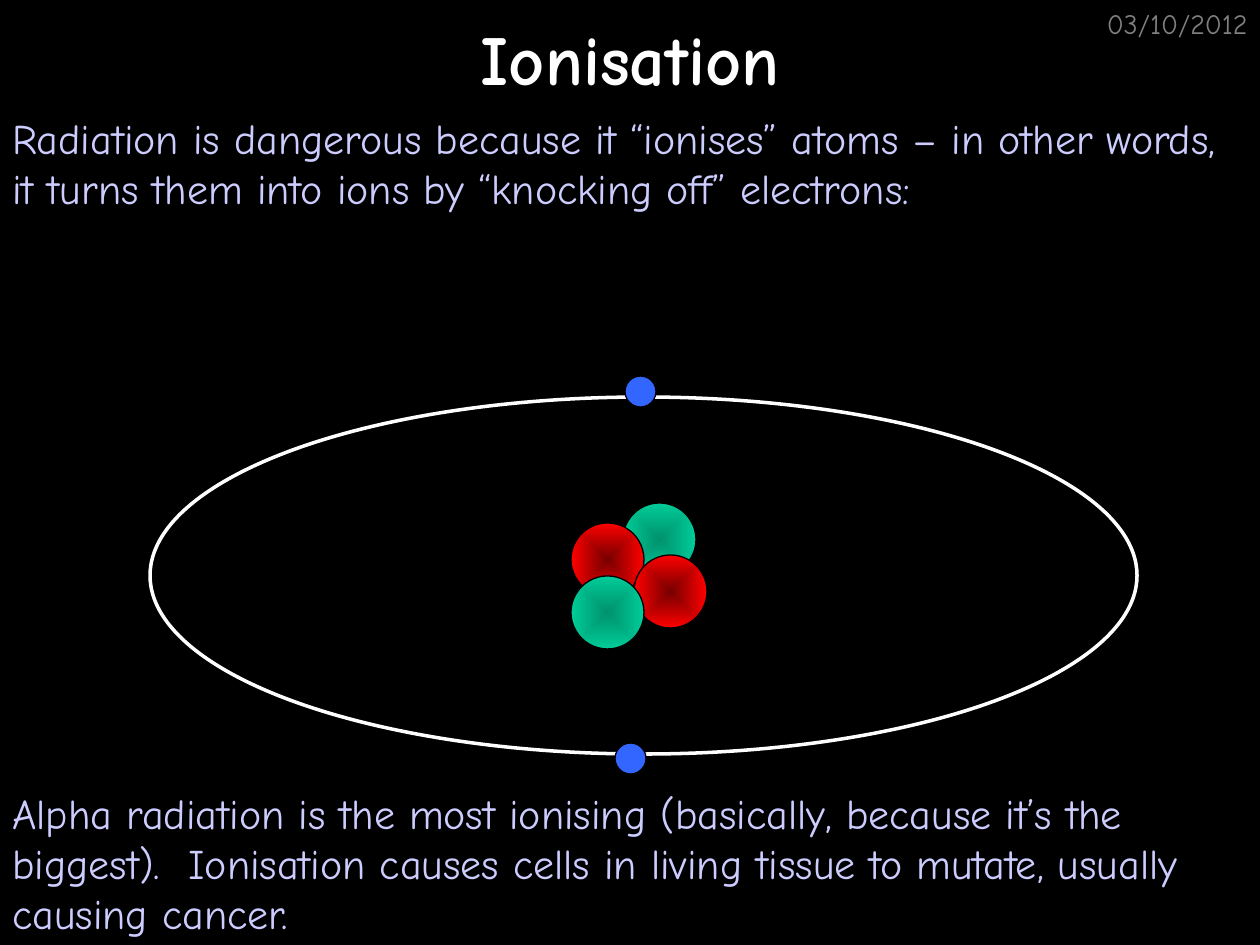
from lxml import etree
from pptx import Presentation
from pptx import util as u
from pptx.dml.color import RGBColor
from pptx.enum import shapes, text
from pptx.oxml import ns

WHITE = RGBColor(0xFF, 0xFF, 0xFF)
BLACK = RGBColor(0x00, 0x00, 0x00)
GREY = RGBColor(0x80, 0x80, 0x80)
LILAC = RGBColor(0xCC, 0xCC, 0xFF)
BLUE = RGBColor(0x33, 0x66, 0xFF)
GREEN = (RGBColor(0x00, 0x92, 0x6D), RGBColor(0x00, 0xCC, 0x99))
RED = (RGBColor(0x76, 0x00, 0x00), RGBColor(0xFF, 0x00, 0x00))


def px(n):
    return u.Emu(n * 914400 // 126)


class Board:
    face = "Comic Neue"

    def __init__(self, deck):
        self.slide = deck.slides.add_slide(deck.slide_layouts[5])
        fill = self.slide.background.fill
        fill.solid()
        fill.fore_color.rgb = BLACK

    def letter(self, frame, words, size, color, align, bold=False):
        frame.word_wrap = True
        para = frame.paragraphs[0]
        para.alignment = align
        run = para.add_run()
        run.text = words
        font = run.font
        for key, val in {"name": self.face, "size": u.Pt(size), "bold": bold}.items():
            setattr(font, key, val)
        font.color.rgb = color

    def title(self, words, box):
        shape = self.slide.shapes.title
        for key, val in zip(("left", "top", "width", "height"), box):
            setattr(shape, key, px(val))
        frame = shape.text_frame
        frame.auto_size = text.MSO_AUTO_SIZE.NONE
        frame.vertical_anchor = text.MSO_ANCHOR.MIDDLE
        self.letter(frame, words, 40, WHITE, text.PP_ALIGN.CENTER, True)

    def note(self, words, box, size=24, color=LILAC, align=text.PP_ALIGN.LEFT):
        shape = self.slide.shapes.add_textbox(*map(px, box))
        self.letter(shape.text_frame, words, size, color, align)

    def oval(self, box, line=BLACK, width=0.75, home=None):
        home = home or self.slide.shapes
        shape = home.add_shape(shapes.MSO_SHAPE.OVAL, *map(px, box))
        shape.shadow.inherit = False
        shape.fill.background()
        shape.line.color.rgb = line
        shape.line.width = u.Pt(width)
        return shape

    def electron(self, left, top):
        fill = self.oval((left, top, 31, 31)).fill
        fill.solid()
        fill.fore_color.rgb = BLUE

    def nucleus(self, parts):
        group = self.slide.shapes.add_group_shape()
        for left, top, tones in parts:
            ball = self.oval((left, top, 73, 73), home=group.shapes)
            self.shade(ball, tones)

    def shade(self, ball, tones):
        ball.fill.gradient()
        for stop, tone, place in zip(ball.fill.gradient_stops, tones, (0, 1)):
            stop.color.rgb = tone
            stop.position = place
        grad = ball.element.spPr.find(ns.qn("a:gradFill"))
        grad.remove(grad.find(ns.qn("a:lin")))
        ring = etree.SubElement(grad, ns.qn("a:path"), {"path": "shape"})
        etree.SubElement(ring, ns.qn("a:fillToRect"), dict.fromkeys("ltrb", "50000"))


def main():
    deck = Presentation()
    deck.slide_width, deck.slide_height = px(1260), px(945)
    board = Board(deck)
    board.note("03/10/2012", (998, 0, 262, 63), 16, GREY, text.PP_ALIGN.RIGHT)
    board.title("Ionisation", (0, 0, 1260, 116))
    board.note(
        "Radiation is dangerous because it “ionises” atoms – in other words, "
        "it turns them into ions by “knocking off” electrons:",
        (0, 106, 1260, 113),
    )
    board.nucleus([(623, 503, GREEN), (571, 523, RED), (634, 555, RED), (571, 576, GREEN)])
    board.oval((150, 397, 987, 357), WHITE, 2)
    board.electron(615, 743)
    board.electron(625, 376)
    board.note(
        "Alpha radiation is the most ionising (basically, because it’s the biggest).  "
        "Ionisation causes cells in living tissue to mutate, usually causing cancer.",
        (0, 781, 1260, 164),
    )
    deck.save("out.pptx")


if __name__ == "__main__":
    main()
